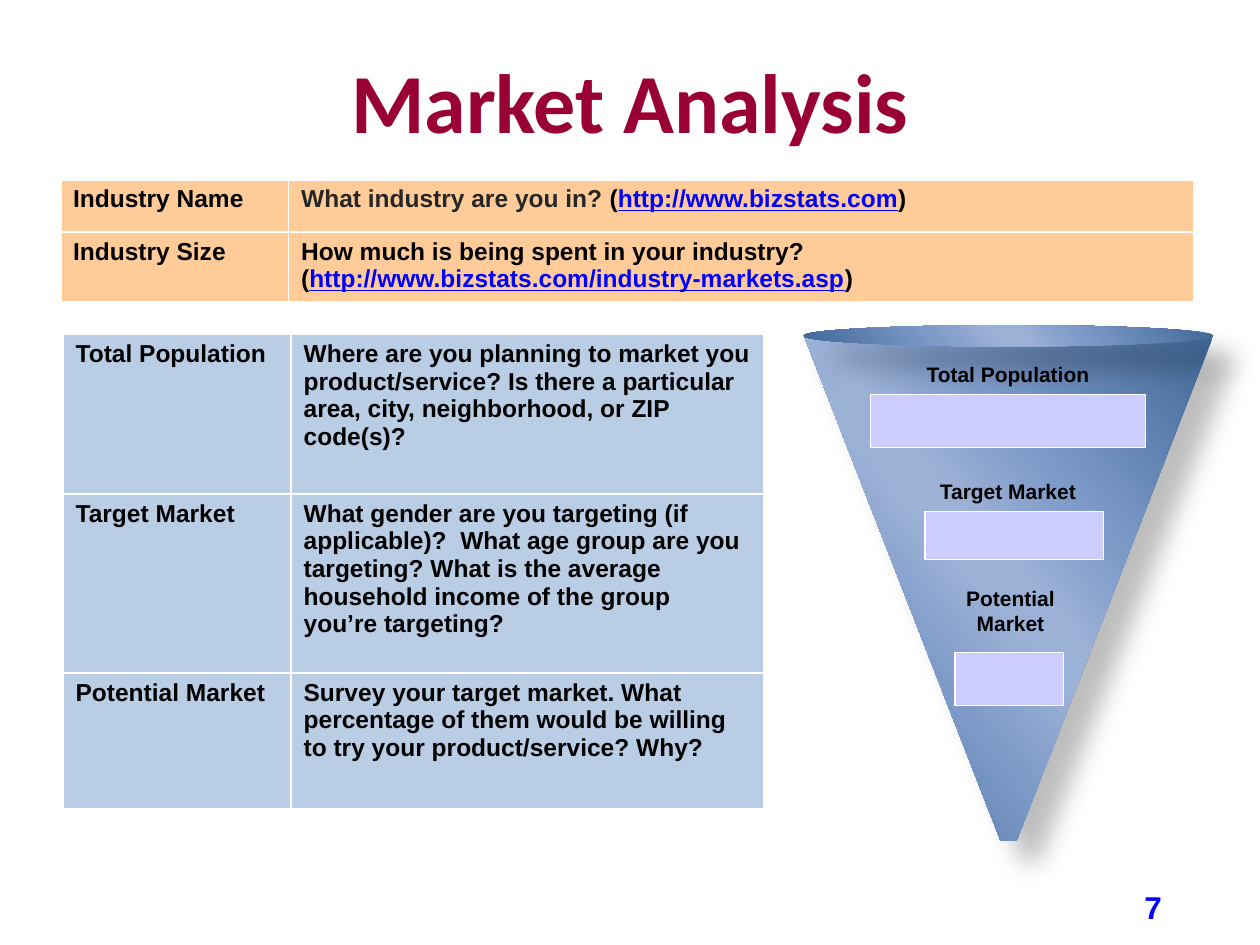
from lxml import etree
from pptx import Presentation
from pptx.dml.color import RGBColor
from pptx.enum.shapes import MSO_SHAPE
from pptx.enum.text import MSO_ANCHOR, PP_ALIGN
from pptx.oxml.ns import qn
from pptx.util import Inches, Pt

CENTER, RIGHT = PP_ALIGN.CENTER, PP_ALIGN.RIGHT
MIDDLE = MSO_ANCHOR.MIDDLE
OVAL, PROCESS = MSO_SHAPE.OVAL, MSO_SHAPE.FLOWCHART_PROCESS

BLACK = RGBColor(0x00, 0x00, 0x00)
WHITE = RGBColor(0xFF, 0xFF, 0xFF)
GRAY = RGBColor(0x26, 0x26, 0x26)
BLUE = RGBColor(0x00, 0x00, 0xFF)
MAROON = RGBColor(0x99, 0x00, 0x33)
PEACH = RGBColor(0xFF, 0xCC, 0x99)
SKY = RGBColor(0xB9, 0xCD, 0xE5)
LILAC = RGBColor(0xCC, 0xCC, 0xFF)
STEEL = RGBColor(0x3F, 0x67, 0x97)
MID = RGBColor(0x7D, 0x9A, 0xC8)
PALE = RGBColor(0x9C, 0xB1, 0xD6)
STOPS = ((0, STEEL), (33, MID), (47, PALE), (53, PALE), (68, MID), (100, STEEL))

SITE = "http://www.bizstats.com"
INDUSTRY = (
    (("Industry Name",),
     (("What industry are you in?", GRAY), " (", (SITE, BLUE), ")")),
    (("Industry Size",),
     ("How much is being spent in your industry? (",
      (SITE + "/industry-markets.asp", BLUE), ")")),
)
MARKET = (
    (("Total Population",),
     ("Where are you planning to market you product/service? Is there a "
      "particular area, city, neighborhood, or ZIP code(s)?",)),
    (("Target Market",),
     ("What gender are you targeting (if applicable)?  What age group are you "
      "targeting? What is the average household income of the group you’re "
      "targeting?",)),
    (("Potential Market",),
     ("Survey your target market. What percentage of them would be willing "
      "to try your product/service? Why?",)),
)


def write(frame, text, size=14, color=BLACK, font="Arial", align=None, line=False):
    """Append a bold run to the first paragraph of a text frame."""
    para = frame.paragraphs[0]
    if align is not None:
        para.alignment = align
    run = para.add_run()
    run.text = text
    run.font.size, run.font.name, run.font.bold = Pt(size), font, True
    run.font.underline = line
    run.font.color.rgb = color


def add_text(slide, box, text, **form):
    """Add a wrapped text box and return its frame."""
    frame = slide.shapes.add_textbox(*map(Inches, box)).text_frame
    frame.word_wrap = True
    write(frame, text, **form)
    return frame


def add_title(slide, box, text):
    """Place and fill the title placeholder."""
    title = slide.shapes.title
    title.left, title.top, title.width, title.height = map(Inches, box)
    title.text_frame.vertical_anchor = MIDDLE
    write(title.text_frame, text, size=48, color=MAROON, font="Calibri", align=CENTER)


def add_edge(cell, side, width):
    """Draw one white cell border."""
    props = cell._tc.get_or_add_tcPr()
    edge = etree.SubElement(props, qn("a:ln" + side), w=str(Pt(width)))
    fill = etree.SubElement(edge, qn("a:solidFill"))
    etree.SubElement(fill, qn("a:srgbClr"), val=str(WHITE))


def add_grid(slide, box, rows, cols, highs, fill, outer=1):
    """Add a table with white rules and one fill colour."""
    shape = slide.shapes.add_table(len(rows), len(cols), *map(Inches, box))
    table = shape.table
    table.first_row = table.horz_banding = False
    for col, width in zip(table.columns, cols):
        col.width = Inches(width)
    for r, (row, high) in enumerate(zip(rows, highs)):
        table.rows[r].height = Inches(high)
        for c, parts in enumerate(row):
            cell = table.cell(r, c)
            ends = {"L": c == 0, "R": c == len(cols) - 1,
                    "T": r == 0, "B": r == len(rows) - 1}
            for side, end in ends.items():
                add_edge(cell, side, outer if end else 1)
            cell.fill.solid()
            cell.fill.fore_color.rgb = fill
            for part in parts:
                text, color = (part, BLACK) if isinstance(part, str) else part
                write(cell.text_frame, text, color=color, line=color == BLUE)


def shade(shape):
    """Give a shape the metallic gradient and a soft shadow."""
    shape.fill.gradient()
    shape.line.fill.background()
    shape.shadow.inherit = False
    props = shape._element.spPr
    stops = props.find(".//" + qn("a:gsLst"))
    for stop in list(stops):
        stops.remove(stop)
    for pos, color in STOPS:
        stop = etree.SubElement(stops, qn("a:gs"), pos=str(pos * 1000))
        etree.SubElement(stop, qn("a:srgbClr"), val=str(color))
    props.find(".//" + qn("a:lin")).set("ang", str(139 * 60000))
    glow = etree.SubElement(
        props.find(qn("a:effectLst")), qn("a:outerShdw"), blurRad=str(Pt(15)),
        dist=str(Pt(18)), dir=str(45 * 60000), algn="tl", rotWithShape="0")
    tint = etree.SubElement(glow, qn("a:srgbClr"), val=str(BLACK))
    etree.SubElement(tint, qn("a:alpha"), val="26000")


def add_cone(slide, box):
    """Draw the funnel body and its rim as a group."""
    x, y, w, h = box
    rim, tip = 0.17, 0.13
    top, mid = y + rim / 2, x + w / 2
    group = slide.shapes.add_group_shape()
    path = group.shapes.build_freeform(Inches(x), Inches(top))
    points = ((mid - tip / 2, y + h), (mid + tip / 2, y + h), (x + w, top))
    path.add_line_segments([tuple(map(Inches, p)) for p in points])
    shade(path.convert_to_shape())
    shade(group.shapes.add_shape(OVAL, *map(Inches, (x, y, w, rim))))


def add_level(slide, label, box, text):
    """Add a funnel level: a label and its blank box."""
    add_text(slide, label, text, size=12, align=CENTER)
    shape = slide.shapes.add_shape(PROCESS, *map(Inches, box))
    shape.shadow.inherit = False
    shape.fill.solid()
    shape.fill.fore_color.rgb = LILAC
    shape.line.color.rgb = WHITE
    shape.line.width = Pt(0.75)


def add_funnel(slide, box):
    """Draw the funnel with its three levels."""
    x, y = box[:2]
    add_cone(slide, box)
    levels = (
        ("Total Population", (0.53, 0.24, 2.18, 0.3), (0.53, 0.55, 2.18, 0.42)),
        ("Target Market", (0.53, 1.17, 2.18, 0.3), (0.96, 1.48, 1.42, 0.38)),
        ("Potential Market", (0.93, 2.02, 1.42, 0.51), (1.2, 2.6, 0.86, 0.42)),
    )
    for text, *spots in levels:
        label, blank = [(x + a, y + b, w, h) for a, b, w, h in spots]
        add_level(slide, label, blank, text)


def add_number(slide, box, text):
    """Add the page number."""
    frame = add_text(slide, box, text, size=18, color=BLUE, align=RIGHT)
    frame.margin_left = frame.margin_right = 0
    frame.vertical_anchor = MIDDLE


def main():
    """Build and save the slide."""
    deck = Presentation()
    deck.slide_width, deck.slide_height = Inches(10), Inches(7.5)
    slide = deck.slides.add_slide(deck.slide_layouts[5])
    add_title(slide, (0.5, 0.25, 9, 1.08), "Market Analysis")
    add_grid(slide, (0.48, 1.42, 9, 0.98), INDUSTRY, (1.81, 7.19), (0.42, 0.56),
             PEACH, outer=2.25)
    add_grid(slide, (0.5, 2.65, 5.56, 3.77), MARKET, (1.81, 3.75),
             (1.27, 1.42, 1.08), SKY)
    add_funnel(slide, (6.38, 2.58, 3.25, 4.09))
    add_number(slide, (8.8, 7.08, 0.42, 0.23), "7")
    deck.save("out.pptx")


if __name__ == "__main__":
    main()
